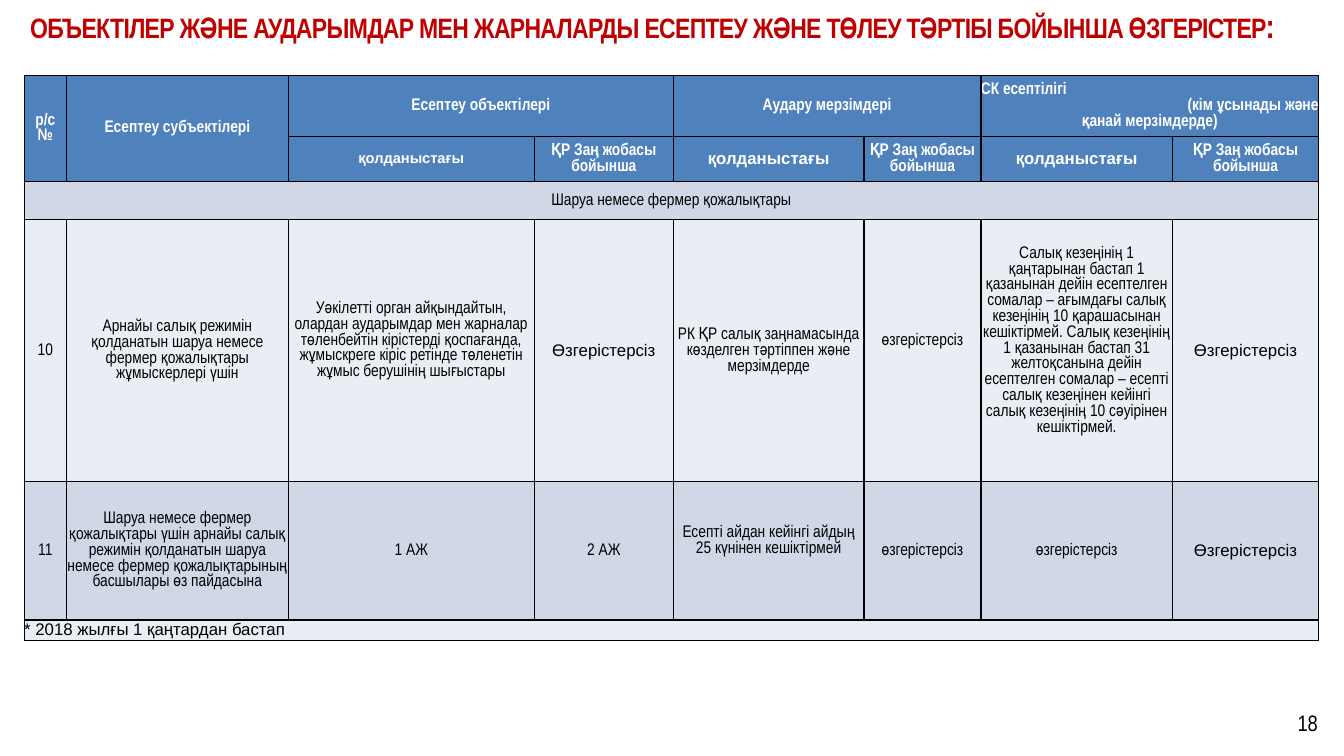
from pptx import Presentation
from pptx import util as u
from pptx.dml.color import RGBColor
from pptx.enum import text
from pptx.oxml import parse_xml
from pptx.oxml.ns import nsdecls

NARROW, WIDE = "Arial Narrow", "Arial"
BLUE, BAND, PALE = "4F81BD", "D0D8E8", "E9EDF4"
LEFT, CENTER, RIGHT = text.PP_ALIGN.LEFT, text.PP_ALIGN.CENTER, text.PP_ALIGN.RIGHT

COLUMN_WIDTHS = [0.42, 2.2, 2.44, 1.38, 1.89, 1.16, 1.9, 1.45]
ROW_HEIGHTS = [0.58, 0.45, 0.38, 2.54, 1.37, 0.19]
ROW_FILLS = [BLUE, BLUE, BAND, PALE, BAND, PALE]
CURRENT, DRAFT = "қолданыстағы", "ҚР Заң жобасы бойынша"
UNCHANGED, UNCHANGED_LOWER = "Өзгерістерсіз", "өзгерістерсіз"
ROWS = [
    ["р/с\n№", "Есептеу субъектілері", "Есептеу объектілері", "", "Аудару мерзімдері", "",
     "СК есептілігі\n(кім ұсынады және\nқанай мерзімдерде)", ""],
    ["", ""] + [CURRENT, DRAFT] * 3,
    ["Шаруа немесе фермер қожалықтары"] + [""] * 7,
    ["10",
     "Арнайы салық режимін қолданатын шаруа немесе фермер қожалықтары жұмыскерлері үшін",
     "Уәкілетті орган айқындайтын, олардан аударымдар мен жарналар төленбейтін кірістерді "
     "қоспағанда, жұмыскреге кіріс ретінде төленетін жұмыс берушінің шығыстары",
     UNCHANGED,
     "РК ҚР салық заңнамасында көзделген тәртіппен және мерзімдерде",
     UNCHANGED_LOWER,
     "Салық кезеңінің 1 қаңтарынан бастап 1 қазанынан дейін есептелген сомалар – ағымдағы "
     "салық кезеңінің 10 қарашасынан кешіктірмей. Салық кезеңінің 1 қазанынан бастап "
     "31 желтоқсанына дейін есептелген сомалар – есепті салық кезеңінен кейінгі салық "
     "кезеңінің 10 сәуірінен кешіктірмей.",
     UNCHANGED],
    ["11",
     "Шаруа немесе фермер қожалықтары үшін арнайы салық режимін қолданатын шаруа немесе "
     "фермер қожалықтарының басшылары өз пайдасына",
     "1 АЖ", "2 АЖ", "Есепті айдан кейінгі айдың 25 күнінен кешіктірмей",
     UNCHANGED_LOWER, UNCHANGED_LOWER, UNCHANGED],
    ["* 2018 жылғы 1 қаңтардан бастап"] + [""] * 7,
]
MERGES = [(0, 0, 1, 0), (0, 1, 1, 1), (0, 2, 0, 3), (0, 4, 0, 5), (0, 6, 0, 7),
          (2, 0, 2, 7), (5, 0, 5, 7)]
WIDE_CELLS = {(1, 2), (1, 4), (1, 6), (3, 3), (3, 7), (4, 7), (5, 0)}
RAISED_CELLS = {(3, 2), (3, 5), (3, 6), (4, 4)}
ALIGNMENTS = {(0, 6): [LEFT, RIGHT, CENTER], (5, 0): [LEFT]}


def rgb(value):
    return RGBColor.from_string(value)


def style(font, color, **values):
    for name, value in values.items():
        setattr(font, name, value)
    font.color.rgb = rgb(color)


def place(shape, box):
    for name, value in zip(("left", "top", "width", "height"), box):
        setattr(shape, name, u.Inches(value))


def add_borders(cell):
    properties = cell._tc.get_or_add_tcPr()
    for position, side in enumerate("LRTB"):
        properties.insert(position, parse_xml(
            f'<a:ln{side} {nsdecls("a")} w="12700"><a:solidFill>'
            f'<a:srgbClr val="000000"/></a:solidFill></a:ln{side}>'))


def fill_cell(cell, spot, wording):
    row, column = spot
    cell.fill.solid()
    cell.fill.fore_color.rgb = rgb(ROW_FILLS[row])
    add_borders(cell)
    margins = dict.fromkeys(("margin_left", "margin_right", "margin_top", "margin_bottom"), 0)
    if spot in RAISED_CELLS:
        margins["margin_bottom"] = u.Inches(0.2)
    for name, value in margins.items():
        setattr(cell, name, value)
    cell.vertical_anchor = text.MSO_ANCHOR.MIDDLE
    cell.text_frame.text = wording
    heading = row < 2
    for index, paragraph in enumerate(cell.text_frame.paragraphs):
        paragraph.alignment = ALIGNMENTS.get(spot, [CENTER] * 3)[index]
        style(paragraph.font, "FFFFFF" if heading else "000000", bold=heading,
              name=WIDE if spot in WIDE_CELLS else NARROW,
              size=u.Pt(10.5 if spot == (1, 2) else 12))


def add_changes_table(slide, box):
    frame = slide.shapes.add_table(len(ROWS), len(COLUMN_WIDTHS), *map(u.Inches, box))
    changes = frame.table
    for column, width in zip(changes.columns, COLUMN_WIDTHS):
        column.width = u.Inches(width)
    for row, height in zip(changes.rows, ROW_HEIGHTS):
        row.height = u.Inches(height)
    for row, wordings in enumerate(ROWS):
        for column, wording in enumerate(wordings):
            fill_cell(changes.cell(row, column), (row, column), wording)
    for top, left, bottom, right in MERGES:
        changes.cell(top, left).merge(changes.cell(bottom, right))


def add_heading(slide, box):
    heading = slide.shapes.title
    place(heading, box)
    frame = heading.text_frame
    frame.word_wrap = True
    frame.auto_size = text.MSO_AUTO_SIZE.NONE
    frame.vertical_anchor = text.MSO_ANCHOR.TOP
    paragraph = frame.paragraphs[0]
    paragraph.alignment = LEFT
    for wording, size in (
            ("ОБЪЕКТІЛЕР ЖӘНЕ АУДАРЫМДАР МЕН ЖАРНАЛАРДЫ ЕСЕПТЕУ ЖӘНЕ ТӨЛЕУ ТӘРТІБІ "
             "БОЙЫНША ӨЗГЕРІСТЕР", 20), (":", 24)):
        run = paragraph.add_run()
        run.text = wording
        style(run.font, "C00000", name=NARROW, size=u.Pt(size), bold=True)
        run._r.get_or_add_rPr().set("spc", "-50")


def add_page_number(slide, box):
    frame = slide.shapes.add_textbox(*map(u.Inches, box)).text_frame
    frame.word_wrap = True
    frame.vertical_anchor = text.MSO_ANCHOR.MIDDLE
    frame.text = "18"
    paragraph = frame.paragraphs[0]
    paragraph.alignment = RIGHT
    style(paragraph.runs[0].font, "000000", name=NARROW, size=u.Pt(16))


def main():
    deck = Presentation()
    deck.slide_width, deck.slide_height = u.Inches(13.33), u.Inches(7.5)
    slide = deck.slides.add_slide(deck.slide_layouts[5])
    add_page_number(slide, (10.06, 6.97, 3.11, 0.4))
    add_changes_table(slide, (0.24, 0.75, sum(COLUMN_WIDTHS), sum(ROW_HEIGHTS)))
    add_heading(slide, (0.2, 0, 12.88, 0.5))
    deck.save("out.pptx")


if __name__ == "__main__":
    main()
